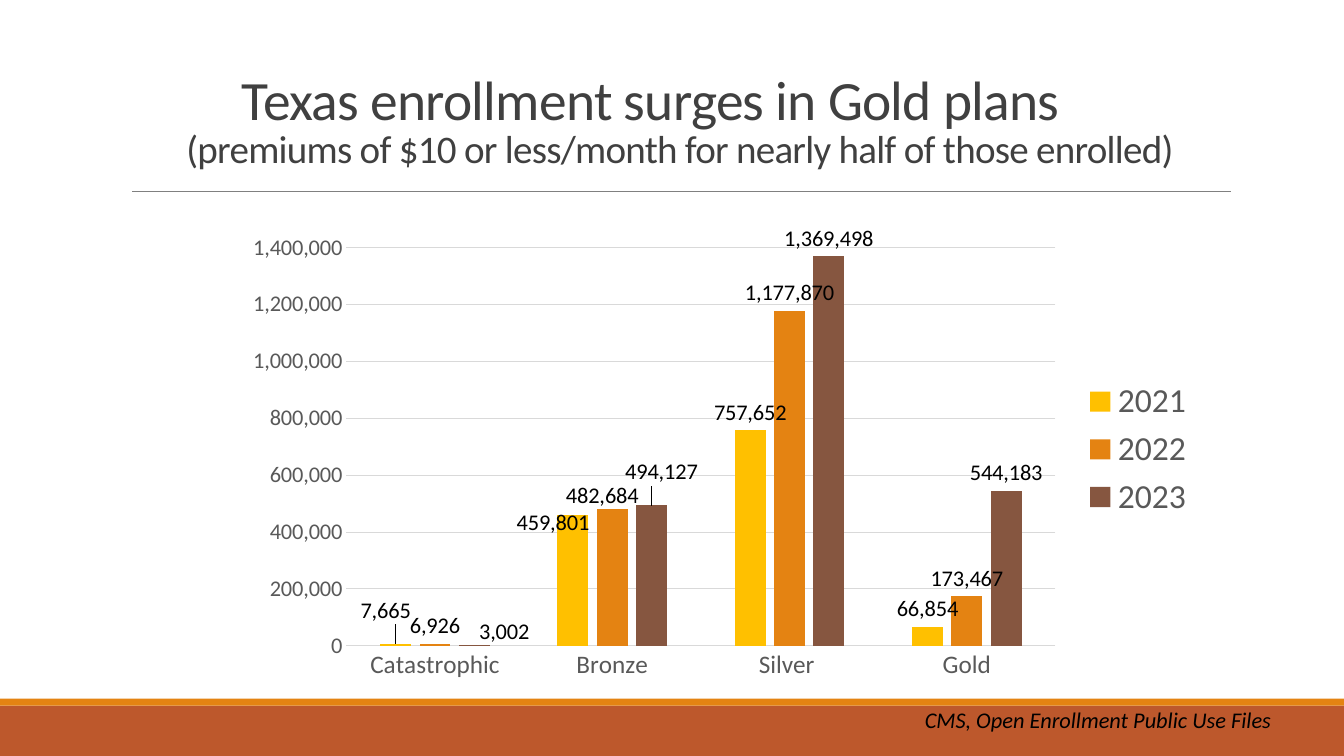
"""Build a slide charting Texas marketplace enrollment by plan level."""
import lxml.etree
import pptx
import pptx.chart.data
import pptx.dml.color
import pptx.enum.chart
import pptx.enum.shapes
import pptx.enum.text
import pptx.oxml
import pptx.oxml.ns
import pptx.util

Pt = pptx.util.Pt
qn = pptx.oxml.ns.qn

FONT = "Calibri"
INK, GRAY, GRID = "000000", "595959", "D9D9D9"
TITLE = "Texas enrollment surges in Gold plans"
SUBTITLE = "(premiums of $10 or less/month for nearly half of those enrolled)"
CREDIT = "CMS, Open Enrollment Public Use Files"
BANDS = [("BD582C", 504, 36), ("E48312", 499, 5)]
PLANS = ["Catastrophic", "Bronze", "Silver ", "Gold"]
PLAIN = "#,##0"
ACCOUNTING = '_(* #,##0_);_(* \\(#,##0\\);_(* "-"??_);_(@_)'
YEARS = [
    {"name": "2021", "color": "FFC000", "format": PLAIN,
     "values": [7665, 459801, 757652, 66854],
     "label_shifts": {0: (-0.01, -0.03), 1: (-0.02, 0.05)}},
    {"name": "2022", "color": "E48312", "format": ACCOUNTING,
     "values": [6926, 482684, 1177870, 173467],
     "label_shifts": {1: (-0.01, 0.01)}},
    {"name": "2023", "color": "865640", "format": ACCOUNTING,
     "values": [3002, 494127, 1369498, 544183],
     "label_shifts": {0: (0.03, 0.01), 1: (0.01, -0.03)}},
]
PLOT_AREA = {"x": 0.14, "y": 0.1, "w": 0.71, "h": 0.79}


def rgb(color):
    return pptx.dml.color.RGBColor.from_string(color)


def format_font(font, size, color, italic=None):
    font.name, font.size, font.italic = FONT, Pt(size), italic
    font.color.rgb = rgb(color)


def write_text(paragraph, text, size, color, italic=None, spacing=None):
    run = paragraph.add_run()
    run.text = text
    format_font(run.font, size, color, italic)
    if spacing is not None:
        run.font._element.set("spc", str(int(spacing * 100)))


def manual_layout(values, inner=False):
    layout = pptx.oxml.parse_xml(
        f'<c:layout xmlns:c="{pptx.oxml.ns.nsuri("c")}"><c:manualLayout/></c:layout>')
    settings = {"layoutTarget": "inner", "xMode": "edge", "yMode": "edge"} if inner else {}
    for name, value in {**settings, **values}.items():
        lxml.etree.SubElement(layout[0], qn(f"c:{name}")).set("val", str(value))
    return layout


def add_title(slide):
    title = slide.shapes.title
    title.left, title.top, title.width, title.height = Pt(109.5), Pt(31), Pt(752.5), Pt(95)
    frame = title.text_frame
    frame.word_wrap = True
    frame.auto_size = pptx.enum.text.MSO_AUTO_SIZE.NONE
    frame.vertical_anchor = pptx.enum.text.MSO_ANCHOR.BOTTOM
    lines = [(TITLE, 39.6, 42), (SUBTITLE, 27.9, 0)]
    for index, (text, size, right_indent) in enumerate(lines):
        paragraph = frame.add_paragraph() if index else frame.paragraphs[0]
        paragraph.alignment = pptx.enum.text.PP_ALIGN.CENTER
        paragraph.line_spacing = 0.85
        paragraph.space_before = Pt(0)
        paragraph._p.get_or_add_pPr().set("marR", str(Pt(right_indent)))
        write_text(paragraph, text, size, "404040", spacing=-0.5)


def add_frame(slide, width):
    for color, top, height in BANDS:
        band = slide.shapes.add_shape(
            pptx.enum.shapes.MSO_SHAPE.RECTANGLE, 0, Pt(top), width, Pt(height))
        band.shadow.inherit = False
        band.fill.solid()
        band.fill.fore_color.rgb = rgb(color)
        band.line.fill.background()
    rule = slide.shapes.add_connector(
        pptx.enum.shapes.MSO_CONNECTOR.STRAIGHT, Pt(94.5), Pt(136.5), Pt(879), Pt(136.5))
    rule.line.color.rgb = rgb("808080")
    rule.line.width = Pt(0.5)
    lxml.etree.SubElement(rule._element.spPr, qn("a:effectLst"))


def add_credit(slide):
    box = slide.shapes.add_textbox(Pt(653.5), Pt(501), Pt(306.5), Pt(26.5))
    box.text_frame.word_wrap = True
    write_text(box.text_frame.paragraphs[0], CREDIT, 16, INK, italic=True)


def style_line(line, color):
    line.color.rgb = rgb(color)
    line.width = Pt(0.75)


def style_axes(chart):
    no_tick = pptx.enum.chart.XL_TICK_MARK.NONE
    for axis, size in [(chart.category_axis, 18), (chart.value_axis, 16)]:
        axis.major_tick_mark = axis.minor_tick_mark = no_tick
        format_font(axis.tick_labels.font, size, GRAY)
    style_line(chart.category_axis.format.line, GRID)
    values = chart.value_axis
    values.minimum_scale, values.maximum_scale, values.major_unit = 0, 1400000, 200000
    values.format.line.fill.background()
    values.has_major_gridlines = True
    style_line(values.major_gridlines.format.line, GRID)
    values.tick_labels.number_format = PLAIN
    values.tick_labels.number_format_is_linked = False


def style_series(series, year):
    outside = pptx.enum.chart.XL_LABEL_POSITION.OUTSIDE_END
    series.format.fill.solid()
    series.format.fill.fore_color.rgb = rgb(year["color"])
    series.invert_if_negative = False
    labels = series.data_labels
    labels.show_value = True
    labels.position = outside
    labels.number_format = year["format"]
    labels.number_format_is_linked = False
    format_font(labels.font, 16, INK)
    for index, (x, y) in year["label_shifts"].items():
        label = series.points[index].data_label
        format_font(label.font, 16, INK)
        label.position = outside
        element = labels._element.xpath(f'c:dLbl[c:idx/@val="{index}"]')[0]
        element.insert(1, manual_layout({"x": x, "y": y}))


def add_enrollment_chart(slide):
    data = pptx.chart.data.CategoryChartData(number_format=PLAIN)
    data.categories = PLANS
    for year in YEARS:
        data.add_series(year["name"], year["values"], year["format"])
    chart = slide.shapes.add_chart(
        pptx.enum.chart.XL_CHART_TYPE.COLUMN_CLUSTERED,
        Pt(147.5), Pt(141), Pt(713.5), Pt(360), data).chart
    chart.has_title = False
    format_font(chart.font, 10, INK)
    style_axes(chart)
    plot = chart.plots[0]
    plot.vary_by_categories = False
    plot.gap_width, plot.overlap = 219, -27
    for series, year in zip(plot.series, YEARS):
        style_series(series, year)
    chart.has_legend = True
    chart.legend.position = pptx.enum.chart.XL_LEGEND_POSITION.RIGHT
    chart.legend.include_in_layout = False
    format_font(chart.legend.font, 24, GRAY)
    plot_area = chart._chartSpace.chart.plotArea
    for layout in plot_area.findall(qn("c:layout")):
        plot_area.remove(layout)
    plot_area.insert(0, manual_layout(PLOT_AREA, inner=True))


def main():
    presentation = pptx.Presentation()
    presentation.slide_width, presentation.slide_height = Pt(960), Pt(540)
    slide = presentation.slides.add_slide(presentation.slide_layouts[5])
    add_frame(slide, presentation.slide_width)
    add_title(slide)
    add_credit(slide)
    add_enrollment_chart(slide)
    presentation.save("out.pptx")


if __name__ == "__main__":
    main()
